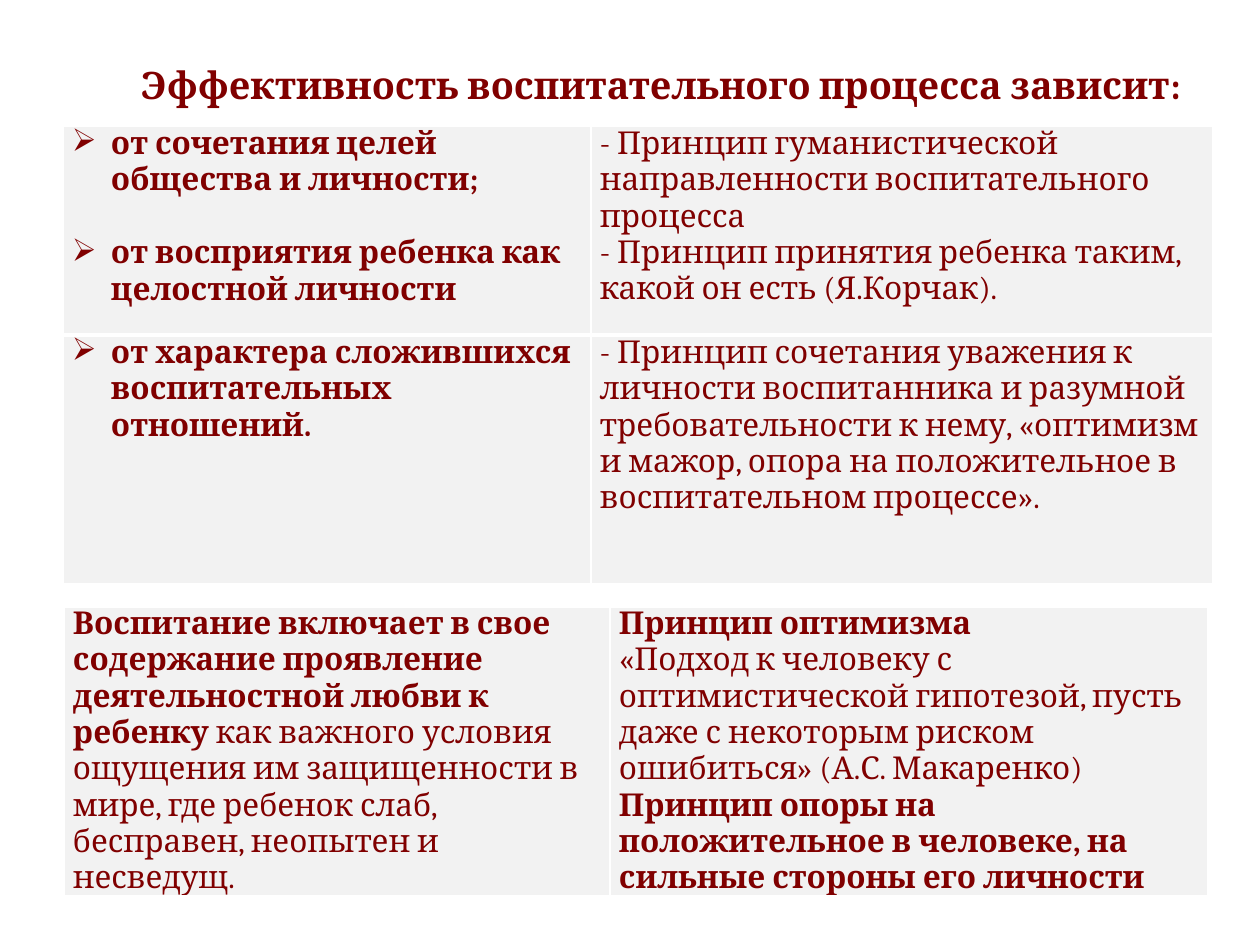
"""Build the slide on what makes upbringing effective."""
from lxml import etree
from pptx import Presentation
from pptx.dml.color import RGBColor
from pptx.enum.text import MSO_ANCHOR, PP_ALIGN
from pptx.oxml.ns import qn
from pptx.util import Pt

PX = 914400 // 126
CENTER = PP_ALIGN.CENTER
MIDDLE = MSO_ANCHOR.MIDDLE
THEME = {
    "font": "Cambria", "text": "800000", "cell": "F2F2F2", "border": "FFFFFF",
    "title_size": 21.6, "body_size": 18, "thin": 1, "thick": 3,
}
BULLET = "➢"
BULLET_INDENT = 39
BULLET_GAP = 21
BOLD, PLAIN = True, False

TITLE = "Эффективность воспитательного процесса зависит:"
TITLE_BOX = (97, 67, 1128, 80)
TITLE_BOTTOM = 40

TABLES = [
    {
        "at": (63, 126), "columns": (528, 622), "rows": (209, 249),
        "edges": (THEME["thin"], THEME["thin"]),
        "cells": [
            [
                {"bullets": True, "paras": [
                    [("от сочетания целей общества и личности;", BOLD)],
                    [("от восприятия ребенка как целостной личности", BOLD)],
                ]},
                {"paras": [
                    [("- Принцип гуманистической направленности воспитательного процесса", PLAIN)],
                    [("- Принцип принятия ребенка таким, какой он есть (Я.Корчак).", PLAIN)],
                ]},
            ],
            [
                {"bullets": True, "paras": [
                    [("от характера сложившихся воспитательных отношений.", BOLD)],
                ]},
                {"paras": [
                    [("- Принцип сочетания уважения к личности воспитанника и разумной "
                      "требовательности к нему, «оптимизм и мажор, опора на положительное "
                      "в воспитательном процессе».", PLAIN)],
                ]},
            ],
        ],
    },
    {
        "at": (64, 606), "columns": (546, 598), "rows": (286,),
        "edges": (THEME["thick"], THEME["thick"]),
        "cells": [
            [
                {"paras": [
                    [("Воспитание включает в свое содержание проявление "
                      "деятельностной любви к ребенку ", BOLD),
                     ("как важного условия ощущения им защищенности в мире, где ребенок "
                      "слаб, бесправен, неопытен и несведущ.", PLAIN)],
                ]},
                {"paras": [
                    [("Принцип оптимизма", BOLD)],
                    [("«Подход к человеку с оптимистической гипотезой, пусть даже "
                      "с некоторым риском ошибиться» (А.С. Макаренко)", PLAIN)],
                    [("Принцип опоры на положительное в человеке, "
                      "на сильные стороны его личности", BOLD)],
                ]},
            ],
        ],
    },
]


def px(value):
    return value * PX


def set_all(target, values):
    for name, value in values.items():
        setattr(target, name, value)


def add_span(para, text, size, bold):
    span = para.add_run()
    span.text = text
    set_all(span.font, {"name": THEME["font"], "size": Pt(size), "bold": bold})
    span.font.color.rgb = RGBColor.from_string(THEME["text"])


def add_bullet(para):
    properties = para._p.get_or_add_pPr()
    properties.set("marL", str(px(BULLET_INDENT)))
    properties.set("indent", str(-px(BULLET_INDENT)))
    etree.SubElement(properties, qn("a:buChar")).set("char", BULLET)


def add_borders(cell, top, bottom):
    properties = cell._tc.get_or_add_tcPr()
    widths = {"L": THEME["thin"], "R": THEME["thin"], "T": top, "B": bottom}
    for side, width in widths.items():
        line = etree.SubElement(properties, qn(f"a:ln{side}"), w=str(Pt(width)))
        fill = etree.SubElement(line, qn("a:solidFill"))
        etree.SubElement(fill, qn("a:srgbClr"), val=THEME["border"])


def fill_cell(cell, content, top, bottom):
    set_all(cell, {"margin_left": px(9), "margin_right": px(9),
                   "margin_top": 0, "margin_bottom": 0})
    add_borders(cell, top, bottom)
    cell.fill.solid()
    cell.fill.fore_color.rgb = RGBColor.from_string(THEME["cell"])
    frame = cell.text_frame
    for number, spans in enumerate(content["paras"]):
        para = frame.add_paragraph() if number else frame.paragraphs[0]
        if content.get("bullets"):
            if number:
                para.space_before = Pt(BULLET_GAP)
            add_bullet(para)
        for text, bold in spans:
            add_span(para, text, THEME["body_size"], bold)


def add_grid(page, data):
    columns, rows = data["columns"], data["rows"]
    left, top = data["at"]
    table = page.shapes.add_table(len(rows), len(columns), px(left), px(top),
                                  px(sum(columns)), px(sum(rows))).table
    set_all(table, {"first_row": False, "horz_banding": False})
    for column, width in zip(table.columns, columns):
        column.width = px(width)
    for row, height in zip(table.rows, rows):
        row.height = px(height)
    first, last = data["edges"]
    edges = [first] + [THEME["thick"]] * (len(rows) - 1) + [last]
    for r, contents in enumerate(data["cells"]):
        for c, content in enumerate(contents):
            fill_cell(table.cell(r, c), content, edges[r], edges[r + 1])


def add_title(page):
    box = page.shapes.title
    set_all(box, dict(zip(("left", "top", "width", "height"), map(px, TITLE_BOX))))
    set_all(box.text_frame, {"vertical_anchor": MIDDLE, "word_wrap": True,
                             "margin_top": 0, "margin_bottom": px(TITLE_BOTTOM)})
    para = box.text_frame.paragraphs[0]
    set_all(para, {"alignment": CENTER, "line_spacing": 0.9, "space_before": Pt(0)})
    add_span(para, TITLE, THEME["title_size"], BOLD)


def main():
    deck = Presentation()
    set_all(deck, {"slide_width": px(1260), "slide_height": px(945)})
    page = deck.slides.add_slide(deck.slide_layouts[5])
    add_title(page)
    for data in TABLES:
        add_grid(page, data)
    deck.save("out.pptx")


if __name__ == "__main__":
    main()
